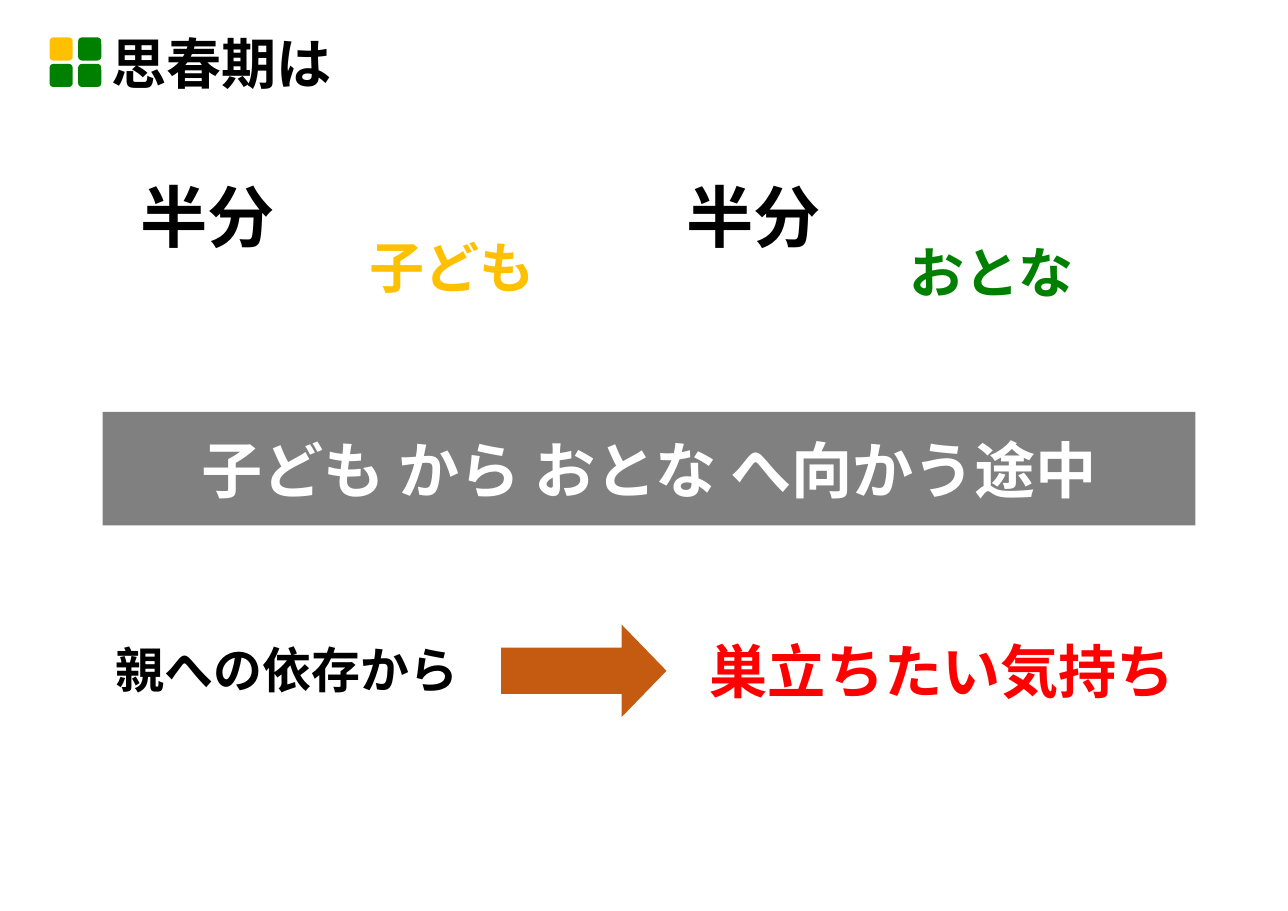
from dataclasses import dataclass
from itertools import product

from lxml.etree import SubElement
from pptx import Presentation
from pptx.dml.color import RGBColor
from pptx.enum.shapes import MSO_SHAPE as Preset
from pptx.enum.text import MSO_ANCHOR as Anchor, PP_ALIGN as Align
from pptx.oxml.ns import qn
from pptx.util import Inches, Pt


@dataclass(frozen=True)
class Theme:
    latin: str = "Arial"
    japanese: str = "Noto Sans CJK JP"
    ink: str = "000000"
    white: str = "FFFFFF"
    child: str = "FFC000"
    adult: str = "008000"
    banner: str = "808080"
    arrow: str = "C55A11"
    wish: str = "FF0000"
    title_size: int = 36
    half_size: int = 44
    stage_size: int = 36
    banner_size: int = 40
    parents_size: int = 32
    wish_size: int = 38


theme = Theme()
WIDTH, HEIGHT = 11.69, 8.27

TITLE = ("思春期は", (7.78, 3.26, 84.86, 8.22))
BANNER = ("子ども から おとな へ向かう途中", (7.96, 45.22, 84.86, 12.45))
ARROW = (38.92, 68.56, 12.83, 10.16)
PHRASES = [
    ("半分", (7.27, 18.5, 17.71, 10.28), theme.half_size, theme.ink, Anchor.MIDDLE),
    ("子ども", (23.52, 25.03, 23.1, 10.28), theme.stage_size, theme.child, Anchor.TOP),
    ("半分", (50.38, 18.5, 16.25, 10.28), theme.half_size, theme.ink, Anchor.MIDDLE),
    ("おとな", (65.44, 25.63, 23.1, 10.28), theme.stage_size, theme.adult, Anchor.TOP),
    ("親への依存から", (7.78, 69.65, 29, 10.52), theme.parents_size, theme.ink, Anchor.TOP),
    ("巣立ちたい気持ち", (53.64, 69.17, 39.09, 16.2), theme.wish_size, theme.wish, Anchor.TOP),
]
TILE_LEFT, TILE_TOP = 3.85, 4.11
TILE_WIDTH, TILE_HEIGHT = 1.8, 2.54
TILE_COLUMN, TILE_ROW = 2.22, 2.9


def share(box):
    return [Inches(part * side / 100) for part, side in zip(box, (WIDTH, HEIGHT) * 2)]


def write(holder, wording, size, color, anchor=Anchor.MIDDLE, align=Align.CENTER, latin=theme.latin):
    frame = holder.text_frame
    frame.text = wording
    frame.word_wrap = True
    frame.vertical_anchor = anchor
    line = frame.paragraphs[0]
    line.alignment = align
    font = line.runs[0].font
    font.name, font.size, font.bold = latin, Pt(size), True
    font.color.rgb = RGBColor.from_string(color)
    SubElement(line.runs[0].font._element, qn("a:ea")).set("typeface", theme.japanese)
    return line


def draw(slide, preset, box, color):
    figure = slide.shapes.add_shape(preset, *share(box))
    figure.shadow.inherit = False
    figure.fill.solid()
    figure.fill.fore_color.rgb = RGBColor.from_string(color)
    figure.line.fill.background()
    return figure


def main():
    deck = Presentation()
    deck.slide_width, deck.slide_height = Inches(WIDTH), Inches(HEIGHT)
    slide = deck.slides.add_slide(deck.slide_layouts[5])

    wording, box = TITLE
    title = slide.shapes.title
    title.left, title.top, title.width, title.height = share(box)
    heading = write(title, wording, theme.title_size, theme.ink,
                    align=Align.LEFT, latin=theme.japanese)
    heading.line_spacing = 0.9

    for row, column in product(range(2), repeat=2):
        place = (TILE_LEFT + column * TILE_COLUMN, TILE_TOP + row * TILE_ROW,
                 TILE_WIDTH, TILE_HEIGHT)
        draw(slide, Preset.ROUNDED_RECTANGLE, place,
             theme.adult if row or column else theme.child)

    wording, box = BANNER
    banner = draw(slide, Preset.RECTANGLE, box, theme.banner)
    write(banner, wording, theme.banner_size, theme.white)

    for wording, box, size, color, anchor in PHRASES:
        write(slide.shapes.add_textbox(*share(box)), wording, size, color, anchor)

    arrow = draw(slide, Preset.RIGHT_ARROW, ARROW, theme.arrow)
    arrow.adjustments[1] = 0.485

    deck.save("out.pptx")


if __name__ == "__main__":
    main()
